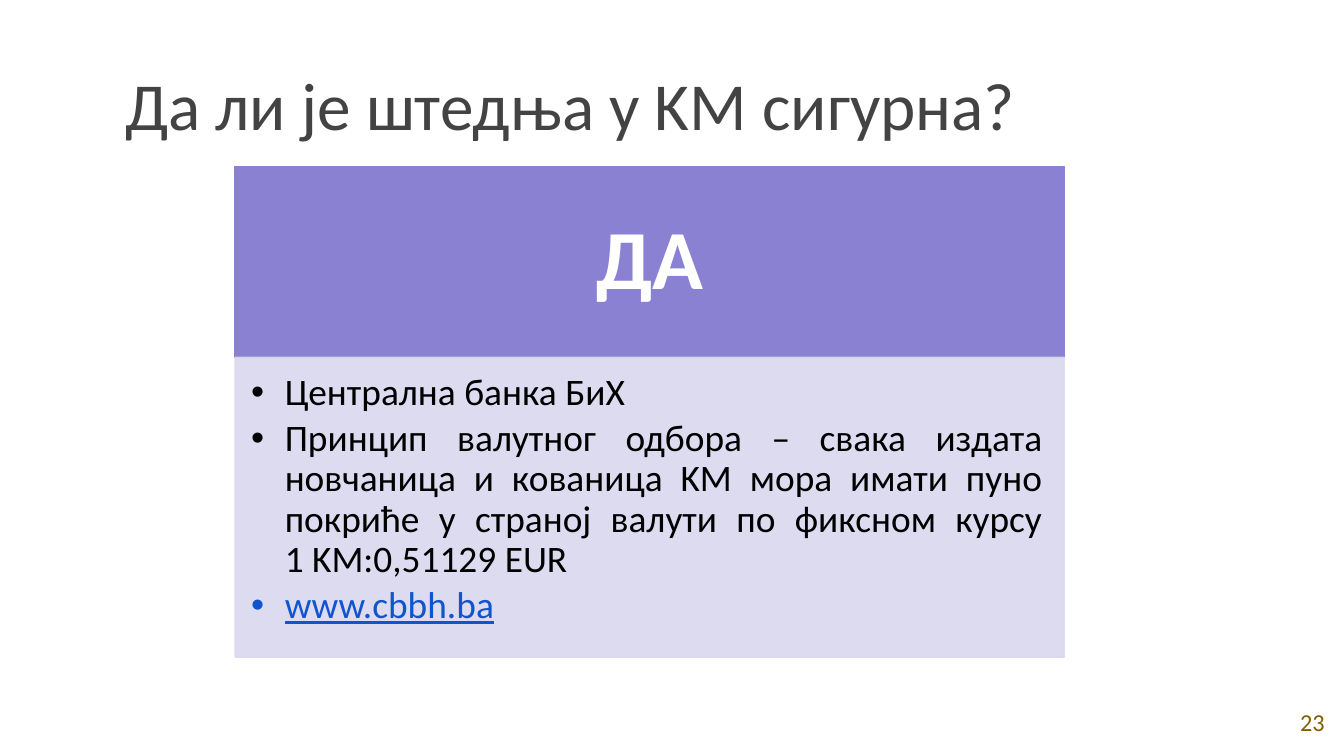
from dataclasses import dataclass

from lxml import etree
from pptx import Presentation
from pptx.dml.color import RGBColor
from pptx.enum.shapes import MSO_SHAPE
from pptx.enum.text import MSO_ANCHOR, MSO_AUTO_SIZE, PP_ALIGN
from pptx.oxml.ns import qn
from pptx.util import Pt

RECTANGLE = MSO_SHAPE.RECTANGLE
TOP, MIDDLE, BOTTOM = MSO_ANCHOR.TOP, MSO_ANCHOR.MIDDLE, MSO_ANCHOR.BOTTOM
LEFT, CENTER, JUSTIFY = PP_ALIGN.LEFT, PP_ALIGN.CENTER, PP_ALIGN.JUSTIFY
TITLE_ONLY = 5


@dataclass(frozen=True)
class Theme:
    font: str = "Calibri"
    title_color: str = "434343"
    number_color: str = "7F6000"
    answer_fill: str = "8B81D2"
    reasons_fill: str = "DAD8EE"
    answer_color: str = "FFFFFF"
    body_color: str = "000000"
    link_color: str = "1155CC"
    title_size: float = 36
    answer_size: float = 45
    body_size: float = 20
    number_size: float = 13


THEME = Theme()
PANEL_LEFT, PANEL_WIDTH = 126, 444.2
ANSWER_TOP, ANSWER_HEIGHT, REASONS_HEIGHT = 89.3, 102.2, 160.6


def place(shape, left, top, width, height):
    shape.left, shape.top = Pt(left), Pt(top)
    shape.width, shape.height = Pt(width), Pt(height)


def set_frame(shape, anchor, insets):
    """Set wrapping, anchor and the left, top, right and bottom insets."""
    frame = shape.text_frame
    frame.word_wrap = True
    frame.auto_size = MSO_AUTO_SIZE.NONE
    frame.vertical_anchor = anchor
    (frame.margin_left, frame.margin_top,
     frame.margin_right, frame.margin_bottom) = map(Pt, insets)
    return frame


def add_run(paragraph, text, size, color, bold=False, underline=False):
    run = paragraph.add_run()
    run.text = text
    font = run.font
    font.name, font.size = THEME.font, Pt(size)
    font.bold, font.underline = bold, underline
    font.color.rgb = RGBColor.from_string(color)


def add_title(slide, text):
    title = slide.shapes.title
    place(title, 59.8, 16.6, 516.2, 67.7)
    paragraph = set_frame(title, BOTTOM, [7.2] * 4).paragraphs[0]
    paragraph.alignment = LEFT
    add_run(paragraph, text, THEME.title_size, THEME.title_color)


def add_page_number(slide, number):
    box = slide.shapes.add_textbox(Pt(686.2), Pt(368), Pt(33.8), Pt(37))
    paragraph = set_frame(box, MIDDLE, [7.2] * 4).paragraphs[0]
    paragraph.alignment = CENTER
    add_run(paragraph, number, THEME.number_size, THEME.number_color)


def add_panel(slide, top, height, color, opacity=100):
    panel = slide.shapes.add_shape(
        RECTANGLE, Pt(PANEL_LEFT), Pt(top), Pt(PANEL_WIDTH), Pt(height))
    panel.shadow.inherit = False
    panel.line.width = Pt(0.75)
    for fill in (panel.fill, panel.line.fill):
        fill.solid()
        fill.fore_color.rgb = RGBColor.from_string(color)
    if opacity < 100:
        for tint in panel.element.spPr.iter(qn("a:srgbClr")):
            etree.SubElement(tint, qn("a:alpha"), val=str(opacity * 1000))
    return panel


def add_answer(slide, text):
    panel = add_panel(slide, ANSWER_TOP, ANSWER_HEIGHT, THEME.answer_fill)
    paragraph = set_frame(panel, MIDDLE, (25.2, 14.4, 25.2, 14.4)).paragraphs[0]
    paragraph.alignment = CENTER
    paragraph.line_spacing = 0.9
    add_run(paragraph, text, THEME.answer_size, THEME.answer_color, bold=True)


def format_bullet(paragraph):
    properties = paragraph._p.get_or_add_pPr()
    properties.set("marL", str(Pt(18)))
    properties.set("indent", str(Pt(-18)))
    etree.SubElement(properties, qn("a:buFont"), typeface="Arial")
    etree.SubElement(properties, qn("a:buChar"), char="•")
    paragraph.alignment = JUSTIFY
    paragraph.line_spacing = 0.9
    paragraph.space_after = Pt(3)


def add_reasons(slide, reasons, website):
    panel = add_panel(slide, ANSWER_TOP + ANSWER_HEIGHT, REASONS_HEIGHT,
                      THEME.reasons_fill, opacity=90)
    frame = set_frame(panel, TOP, (8.6, 8.6, 11.5, 12.2))
    paragraph = frame.paragraphs[0]
    for lines in reasons:
        format_bullet(paragraph)
        for index, line in enumerate(lines):
            if index:
                paragraph.add_line_break()
            add_run(paragraph, line, THEME.body_size, THEME.body_color)
        paragraph = frame.add_paragraph()
    format_bullet(paragraph)
    add_run(paragraph, website, THEME.body_size, THEME.link_color, underline=True)


def main():
    deck = Presentation()
    deck.slide_width, deck.slide_height = Pt(720), Pt(405)
    slide = deck.slides.add_slide(deck.slide_layouts[TITLE_ONLY])
    add_title(slide, "Дa ли је штедња у KM сигурна?")
    add_page_number(slide, "23")
    add_answer(slide, "ДА")
    reasons = [
        ["Централна банка БиХ"],
        ["Принцип валутног одбора – свака издата новчаница и кованица KM "
         "мора имати пуно покриће у страној валути по фиксном курсу",
         "1 KM:0,51129 EUR"],
    ]
    add_reasons(slide, reasons, "www.cbbh.ba")
    deck.save("out.pptx")


if __name__ == "__main__":
    main()
